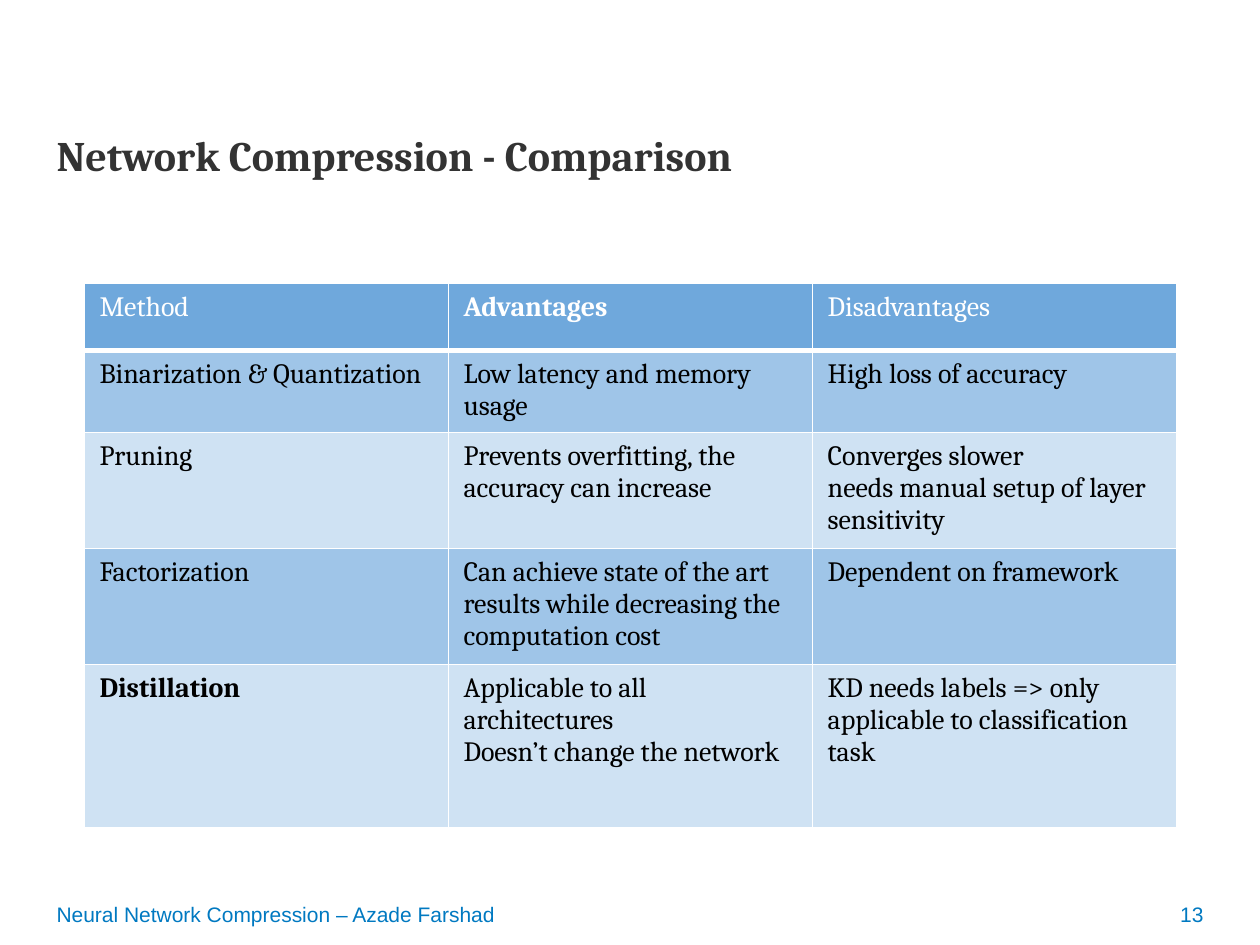
from lxml import etree
from pptx import Presentation
from pptx.dml.color import RGBColor
from pptx.enum.text import MSO_ANCHOR, PP_ALIGN
from pptx.oxml.ns import qn
from pptx.util import Inches, Pt

LEFT, RIGHT = PP_ALIGN.LEFT, PP_ALIGN.RIGHT
TOP, MIDDLE = MSO_ANCHOR.TOP, MSO_ANCHOR.MIDDLE

# Content: a line break inside a cell starts a new paragraph
TITLE = "Network Compression - Comparison"
FOOTER = "Neural Network Compression – Azade Farshad"
PAGE_NUMBER = "13"
ROWS = [
    ("Method", "Advantages", "Disadvantages"),
    ("Binarization & Quantization", "Low latency and memory usage",
     "High loss of accuracy"),
    ("Pruning", "Prevents overfitting, the accuracy can increase",
     "Converges slower\nneeds manual setup of layer sensitivity"),
    ("Factorization",
     "Can achieve state of the art results while decreasing the computation cost",
     "Dependent on framework"),
    ("Distillation",
     "Applicable to all architectures\nDoesn’t change the network",
     "KD needs labels => only applicable to classification task"),
]
BOLD_CELLS = {"Advantages", "Distillation"}

# Table geometry and colours
TABLE_LEFT, TABLE_TOP = 0.67, 2.25
COLUMN_WIDTH = 2.89
ROW_HEIGHTS = [0.53, 0.53, 0.53, 0.53, 1.3]
HEADER_FILL = "6FA8DC"
BAND_FILLS = ["9FC5E8", "CFE2F3"]
BORDER_COLOR = "FFFFFF"
FOOTER_COLOR = "0079C1"


def color(hex_value):
    return RGBColor.from_string(hex_value)


def set_font(paragraph, name, size, hex_value, bold=False):
    font = paragraph.font
    font.name, font.size, font.bold = name, Pt(size), bold
    font.color.rgb = color(hex_value)


def add_text(slide, text, box, name, size, hex_value, bold=False,
             align=LEFT, anchor=MIDDLE):
    frame = slide.shapes.add_textbox(*map(Inches, box)).text_frame
    frame.word_wrap = True
    frame.vertical_anchor = anchor
    frame.text = text
    paragraph = frame.paragraphs[0]
    paragraph.alignment = align
    set_font(paragraph, name, size, hex_value, bold)


def add_borders(cell, bottom_width, top_width):
    properties = cell._tc.get_or_add_tcPr()
    widths = {"a:lnL": 1, "a:lnR": 1, "a:lnT": top_width, "a:lnB": bottom_width}
    for index, (tag, width) in enumerate(widths.items()):
        line = etree.Element(qn(tag), w=str(Pt(width)))
        fill = etree.SubElement(line, qn("a:solidFill"))
        etree.SubElement(fill, qn("a:srgbClr"), val=BORDER_COLOR)
        properties.insert(index, line)


def add_comparison_table(slide):
    columns = len(ROWS[0])
    table = slide.shapes.add_table(
        len(ROWS), columns, Inches(TABLE_LEFT), Inches(TABLE_TOP),
        Inches(COLUMN_WIDTH * columns), Inches(sum(ROW_HEIGHTS))).table
    for column in table.columns:
        column.width = Inches(COLUMN_WIDTH)
    for row_index, texts in enumerate(ROWS):
        header = row_index == 0
        table.rows[row_index].height = Inches(ROW_HEIGHTS[row_index])
        fill = HEADER_FILL if header else BAND_FILLS[(row_index - 1) % 2]
        for column_index, text in enumerate(texts):
            cell = table.cell(row_index, column_index)
            cell.margin_left = cell.margin_right = Inches(0.12)
            cell.margin_top = cell.margin_bottom = Inches(0.06)
            cell.fill.solid()
            cell.fill.fore_color.rgb = color(fill)
            add_borders(cell, 3 if header else 1, 3 if row_index == 1 else 1)
            cell.text = text
            for paragraph in cell.text_frame.paragraphs:
                set_font(paragraph, "Cambria", 16,
                         "FFFFFF" if header else "000000", text in BOLD_CELLS)


def main():
    presentation = Presentation()
    presentation.slide_width, presentation.slide_height = Inches(10), Inches(7.5)
    slide = presentation.slides.add_slide(presentation.slide_layouts[6])

    # Footer, title and table
    add_text(slide, FOOTER, (0.35, 7.09, 6.85, 0.33), "Arial", 12, FOOTER_COLOR)
    add_text(slide, PAGE_NUMBER, (9.02, 7.09, 0.63, 0.33), "Arial", 12,
             FOOTER_COLOR, align=RIGHT)
    add_text(slide, TITLE, (0.35, 0.98, 9.29, 0.95), "Cambria", 24, "333333",
             bold=True, anchor=TOP)
    add_comparison_table(slide)

    presentation.save("out.pptx")


if __name__ == "__main__":
    main()
